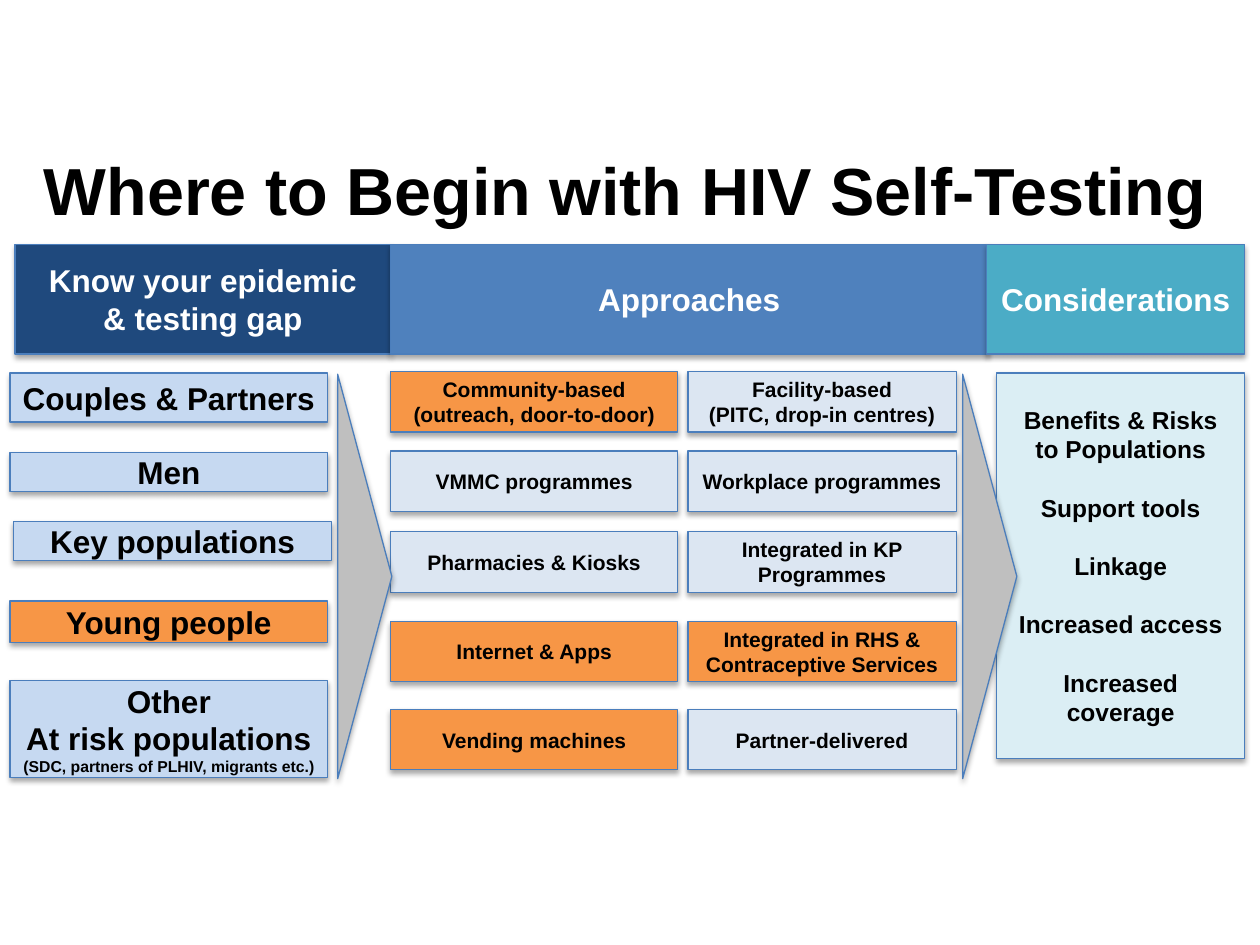
from lxml.etree import SubElement
from pptx import Presentation
from pptx.dml.color import RGBColor
from pptx.enum.shapes import MSO_SHAPE
from pptx.enum.text import MSO_ANCHOR, PP_ALIGN
from pptx.oxml.ns import qn
from pptx.util import Inches, Pt

BLACK = RGBColor(0x00, 0x00, 0x00)
WHITE = RGBColor(0xFF, 0xFF, 0xFF)
NAVY = RGBColor(0x1F, 0x49, 0x7D)
BLUE = RGBColor(0x4F, 0x81, 0xBD)
TEAL = RGBColor(0x4B, 0xAC, 0xC6)
ORANGE = RGBColor(0xF7, 0x96, 0x46)
SKY = RGBColor(0xC6, 0xD9, 0xF1)
PALE_BLUE = RGBColor(0xDC, 0xE6, 0xF2)
PALE_TEAL = RGBColor(0xDB, 0xEE, 0xF4)
GREY = RGBColor(0xBF, 0xBF, 0xBF)
OUTLINE = RGBColor(0x4B, 0x7E, 0xBC)

TITLE = "Where to Begin with HIV Self-Testing"

# left, width, fill, lines
HEADERS = [
    (0.12, 2.98, NAVY, ["Know your epidemic", "& testing gap"]),
    (3.1, 4.74, BLUE, ["Approaches"]),
    (7.83, 2.05, TEAL, ["Considerations"]),
]
HEADER_TOP, HEADER_HEIGHT = 1.94, 0.87

# left, top, height, fill, lines
POPULATIONS = [
    (0.08, 2.96, 0.39, SKY, ["Couples & Partners"]),
    (0.08, 3.59, 0.31, SKY, ["Men"]),
    (0.11, 4.14, 0.31, SKY, ["Key populations"]),
    (0.08, 4.77, 0.33, ORANGE, ["Young people"]),
    (0.08, 5.4, 0.77, SKY, ["Other", "At risk populations"]),
]
POPULATION_WIDTH = 2.52
POPULATION_NOTE = "(SDC, partners of PLHIV, migrants etc.)"

# top, then (fill, lines) for the left and the right column
APPROACHES = [
    (2.95, (ORANGE, ["Community-based", "(outreach, door-to-door)"]),
     (PALE_BLUE, ["Facility-based", "(PITC, drop-in centres)"])),
    (3.58, (PALE_BLUE, ["VMMC programmes"]), (PALE_BLUE, ["Workplace programmes"])),
    (4.22, (PALE_BLUE, ["Pharmacies & Kiosks"]),
     (PALE_BLUE, ["Integrated in KP Programmes"])),
    (4.93, (ORANGE, ["Internet & Apps"]),
     (ORANGE, ["Integrated in RHS & Contraceptive Services"])),
    (5.63, (ORANGE, ["Vending machines"]), (PALE_BLUE, ["Partner-delivered"])),
]
APPROACH_COLUMNS = [(3.1, 2.28), (5.46, 2.13)]  # left, width
APPROACH_HEIGHT = 0.48

CONSIDERATIONS = [
    "Benefits & Risks to Populations",
    "Support tools",
    "Linkage",
    "Increased access",
    "Increased coverage",
]
ARROW_LENGTH, ARROW_DEPTH, ARROW_TOP = 3.21, 0.43, 4.36
FIRST_ARROW_LEFT, SECOND_ARROW_LEFT = 1.29, 6.25


def add_line(paragraph, text, size, color):
    paragraph.alignment = PP_ALIGN.CENTER
    run = paragraph.add_run()
    run.text = text
    run.font.name = "Arial"
    run.font.size = Pt(size)
    run.font.bold = True
    run.font.color.rgb = color


def add_soft_shadow(shape):
    shape.shadow.inherit = False
    effects = shape.element.spPr.find(qn("a:effectLst"))
    shadow = SubElement(effects, qn("a:outerShdw"), blurRad=str(Pt(3.1)),
                        dist=str(Pt(1.8)), dir="5400000", rotWithShape="0")
    color = SubElement(shadow, qn("a:srgbClr"), val="000000")
    SubElement(color, qn("a:alpha"), val="35000")


def add_block(slide, kind, left, top, width, height, fill):
    block = slide.shapes.add_shape(
        kind, Inches(left), Inches(top), Inches(width), Inches(height))
    block.fill.solid()
    block.fill.fore_color.rgb = fill
    block.line.color.rgb = OUTLINE
    block.line.width = Pt(0.75)
    add_soft_shadow(block)
    return block


def add_box(slide, left, top, width, height, fill, lines, size, color=BLACK, gap=0):
    """Add a shadowed rectangle with one paragraph a line, gap points apart."""
    box = add_block(slide, MSO_SHAPE.RECTANGLE, left, top, width, height, fill)
    frame = box.text_frame
    frame.word_wrap = True
    frame.vertical_anchor = MSO_ANCHOR.MIDDLE
    for index, line in enumerate(lines):
        paragraph = frame.add_paragraph() if index else frame.paragraphs[0]
        if index and gap:
            paragraph.space_before = Pt(gap)
        add_line(paragraph, line, size, color)
    return box


def add_arrow(slide, left):
    arrow = add_block(slide, MSO_SHAPE.ISOSCELES_TRIANGLE, left, ARROW_TOP,
                      ARROW_LENGTH, ARROW_DEPTH, GREY)
    arrow.rotation = 90


def add_title(slide):
    title = slide.shapes.add_textbox(
        Inches(0.12), Inches(1.14), Inches(9.69), Inches(0.72))
    frame = title.text_frame
    frame.word_wrap = True
    frame.vertical_anchor = MSO_ANCHOR.MIDDLE
    frame.margin_left = frame.margin_right = Inches(0.08)
    frame.margin_top = frame.margin_bottom = Inches(0.04)
    add_line(frame.paragraphs[0], TITLE, 38, BLACK)


def main():
    presentation = Presentation()
    presentation.slide_width = Inches(10)
    presentation.slide_height = Inches(7.5)
    slide = presentation.slides.add_slide(presentation.slide_layouts[6])

    add_title(slide)
    for left, width, fill, lines in HEADERS:
        add_box(slide, left, HEADER_TOP, width, HEADER_HEIGHT, fill, lines, 18, WHITE)

    for left, top, height, fill, lines in POPULATIONS:
        population = add_box(slide, left, top, POPULATION_WIDTH, height, fill, lines, 18)
    add_line(population.text_frame.add_paragraph(), POPULATION_NOTE, 9, BLACK)

    for top, *cells in APPROACHES:
        for (left, width), (fill, lines) in zip(APPROACH_COLUMNS, cells):
            add_box(slide, left, top, width, APPROACH_HEIGHT, fill, lines, 12)

    add_arrow(slide, FIRST_ARROW_LEFT)
    add_box(slide, 7.91, 2.96, 1.97, 3.06, PALE_TEAL, CONSIDERATIONS, 14, gap=16.5)
    add_arrow(slide, SECOND_ARROW_LEFT)

    presentation.save("out.pptx")


if __name__ == "__main__":
    main()
